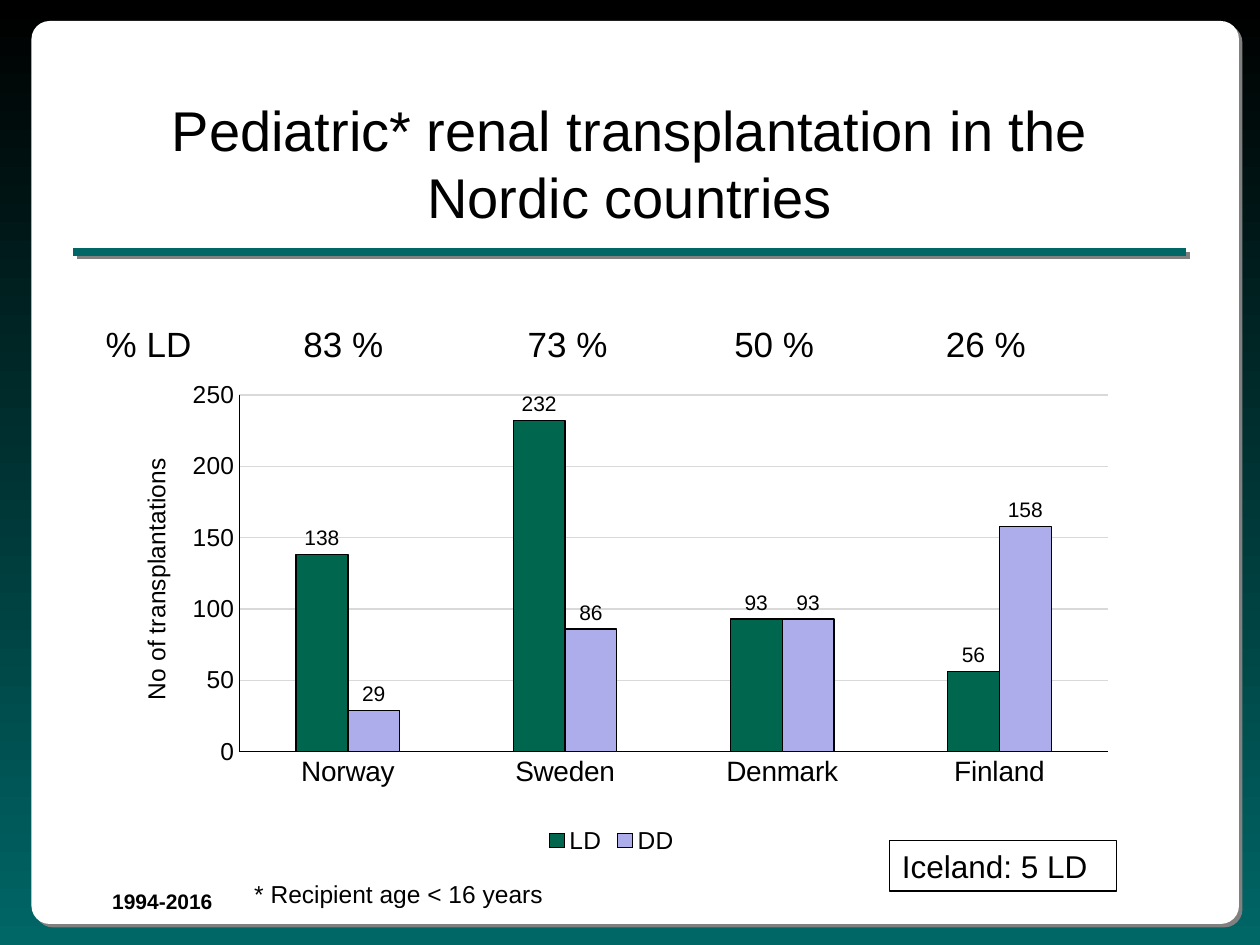
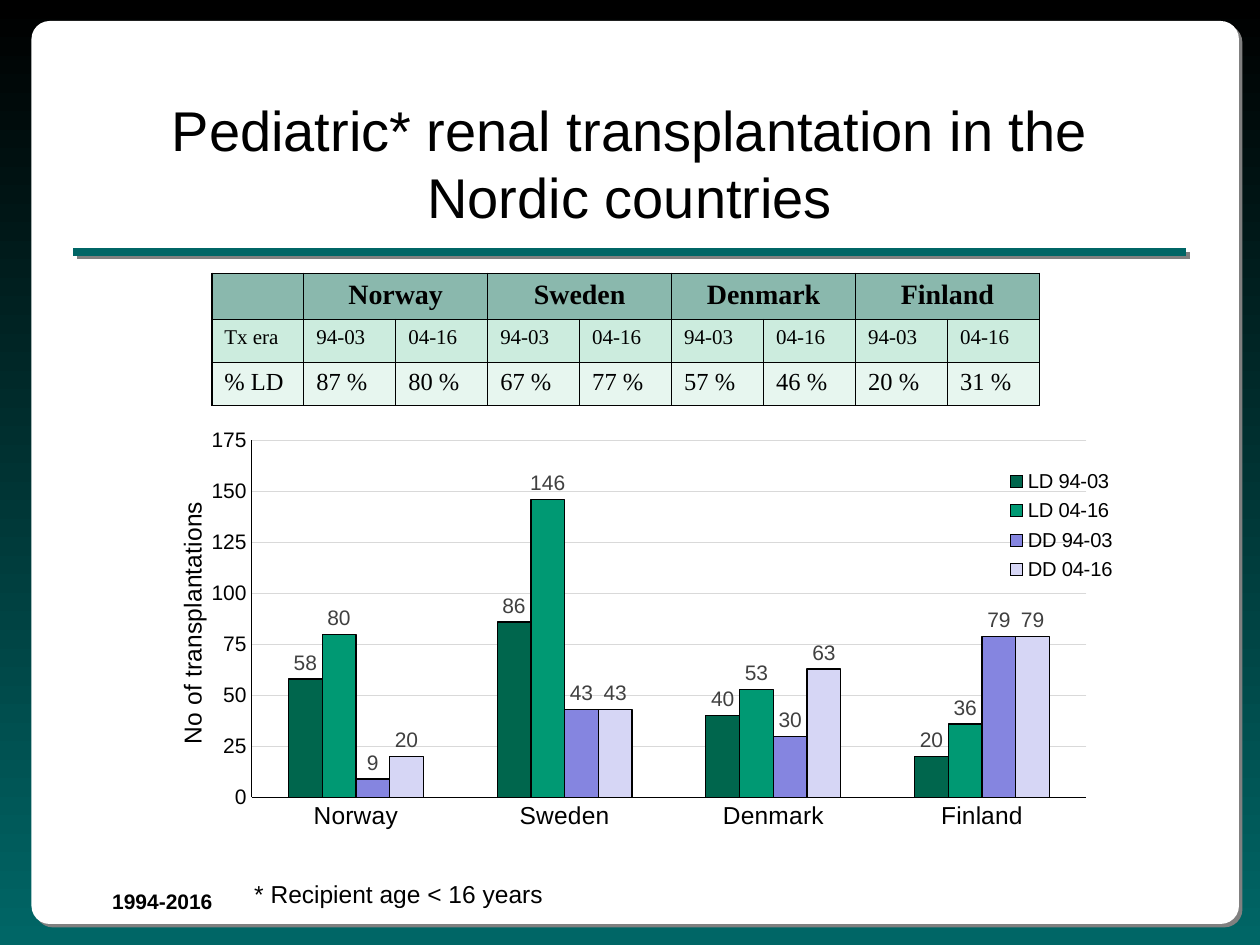
import pptx
import pptx.chart.data
import pptx.dml.color
import pptx.enum.chart
import pptx.enum.shapes
import pptx.enum.text
import pptx.oxml.ns
import pptx.util
from lxml import etree

Pt = pptx.util.Pt
qn = pptx.oxml.ns.qn


class Theme:
    sans, serif = "Arial", "Times New Roman"
    black, white, grey = "000000", "FFFFFF", "808080"
    teal, grid, soft_black = "006666", "D9D9D9", "404040"
    header, era_row, share_row = "00664D", "CCECDE", "E7F6EF"
    title, large, boxed, heading, medium, small = 32, 20, 18, 16, 14, 12
    legend = 11.5
    thin, table_line, rule = 0.75, 1, 4.5


# Content
TITLE = "Pediatric* renal transplantation in the Nordic countries"
PERIOD = "1994-2016"
FOOTNOTE = "* Recipient age < 16 years"
ICELAND = "Iceland: 5 LD"
AXIS_TITLE = "No of transplantations"
COUNTRIES = ["Norway", "Sweden", "Denmark", "Finland"]

# Text, left, width of the living donor shares above the chart
LD_SHARES = [
    ("% LD", 53.3, 63.4),
    ("83 %", 166.3, 60.5),
    ("73 %", 294.5, 60.5),
    ("50 %", 412.5, 63.4),
    ("26 %", 533.5, 60.5),
]

ERAS = ["94-03", "04-16"]
SHARES_BY_ERA = ["87 %", "80 %", "67 %", "77 %", "57 %", "46 %", "20 %", "31 %"]

TOTALS_CHART = {
    "bounds": (54, 211.7, 591, 279.4),
    "series": [
        ("LD", (138, 232, 93, 56), "00664D"),
        ("DD", (29, 86, 93, 158), "ADADEB"),
    ],
    "scale": {"minimum_scale": 0, "maximum_scale": 250, "major_unit": 50},
    "category_size": Theme.heading,
    "value_size": Theme.medium,
    "legend_size": Theme.medium,
    "label_color": Theme.black,
    "legend_position": pptx.enum.chart.XL_LEGEND_POSITION.BOTTOM,
    "plot_layout": (0.14, 0.05, 0.84, 0.73),
    "title_layout": (0.04, 0.17),
    "legend_layout": None,
}
ERAS_CHART = {
    "bounds": (75.6, 164.2, 568, 324),
    "series": [
        ("LD 94-03", (58, 86, 40, 20), "00664D"),
        ("LD 04-16", (80, 146, 53, 36), "009973"),
        ("DD 94-03", (9, 43, 30, 79), "8585E0"),
        ("DD 04-16", (20, 43, 63, 79), "D6D6F5"),
    ],
    "scale": {"minimum_scale": 0, "maximum_scale": 175, "major_unit": 25},
    "category_size": Theme.medium,
    "value_size": Theme.small,
    "legend_size": Theme.legend,
    "label_color": Theme.soft_black,
    "legend_position": pptx.enum.chart.XL_LEGEND_POSITION.RIGHT,
    "plot_layout": (0.12, 0.27, 0.84, 0.63),
    "title_layout": (0.04, 0.37),
    "legend_layout": (0.87, 0.31, 0.13, 0.22),
}


# Formatting helpers
def rgb(color):
    return pptx.dml.color.RGBColor.from_string(color)


def points(*lengths):
    return [Pt(length) for length in lengths]


def set_values(target, values):
    for name, value in values.items():
        setattr(target, name, value)


def set_font(font, size, color=Theme.black, name=Theme.sans, bold=False):
    set_values(font, {"name": name, "size": Pt(size), "bold": bold})
    font.color.rgb = rgb(color)


def set_line(line, color=Theme.black, width=Theme.thin):
    line.color.rgb = rgb(color)
    line.width = Pt(width)


def add_hard_shadow(shape):
    properties = shape.element.spPr
    for old in properties.findall(qn("a:effectLst")):
        properties.remove(old)
    effects = etree.SubElement(properties, qn("a:effectLst"))
    shadow = etree.SubElement(effects, qn("a:outerShdw"), blurRad="0",
                              dist=str(Pt(2.8)), dir="2700000",
                              algn="ctr", rotWithShape="0")
    etree.SubElement(shadow, qn("a:srgbClr"), val=Theme.grey)


def add_text(slide, text, bounds, size, wrap=False, bold=False):
    shape = slide.shapes.add_textbox(*points(*bounds))
    frame = shape.text_frame
    frame.text = text
    frame.word_wrap = wrap
    set_font(frame.paragraphs[0].font, size, bold=bold)
    return shape


# Shared layout: gradient, panel, period and rule
def build_layout(layout, slide):
    fill = layout.background.fill
    fill.gradient()
    fill.gradient_angle = 270
    for stop, color in zip(fill.gradient_stops, (Theme.black, Theme.teal)):
        stop.color.rgb = rgb(color)

    panel = slide.shapes.add_shape(pptx.enum.shapes.MSO_SHAPE.ROUNDED_RECTANGLE,
                                   *points(18, 12, 690, 516))
    panel.adjustments[0] = 0.02
    panel.fill.solid()
    panel.fill.fore_color.rgb = rgb(Theme.white)
    panel.line.fill.background()
    add_hard_shadow(panel)

    period = add_text(slide, PERIOD, (57, 504, 106, 21.6), Theme.small,
                      wrap=True, bold=True)

    rule = slide.shapes.add_connector(pptx.enum.shapes.MSO_CONNECTOR.STRAIGHT,
                                      *points(42, 144, 678, 144))
    set_line(rule.line, Theme.teal, Theme.rule)
    add_hard_shadow(rule)

    # Hand the finished parts to the layout under free identifiers
    for number, shape in enumerate((panel, period, rule), start=100):
        shape.element.xpath(".//p:cNvPr")[0].set("id", str(number))
        layout.shapes.element.append(shape.element)


def fill_common_parts(slide):
    title = slide.shapes.title
    set_values(title, dict(zip(("left", "top", "width", "height"),
                               points(54, 48, 612, 90))))
    frame = title.text_frame
    frame.text = TITLE
    set_values(frame, {
        "word_wrap": True,
        "auto_size": pptx.enum.text.MSO_AUTO_SIZE.NONE,
        "vertical_anchor": pptx.enum.text.MSO_ANCHOR.MIDDLE,
    })
    frame.paragraphs[0].alignment = pptx.enum.text.PP_ALIGN.CENTER
    set_font(frame.paragraphs[0].font, Theme.title)
    add_text(slide, FOOTNOTE, (138.2, 499, 180, 24.5), Theme.medium)


# Charts
def place_chart_part(part, index, fractions, inner=False):
    for old in part.findall(qn("c:layout")):
        part.remove(old)
    layout = etree.Element(qn("c:layout"))
    manual = etree.SubElement(layout, qn("c:manualLayout"))
    if inner:
        etree.SubElement(manual, qn("c:layoutTarget"), val="inner")
    for mode in ("xMode", "yMode"):
        etree.SubElement(manual, qn("c:" + mode), val="edge")
    for side, fraction in zip("xywh", fractions):
        etree.SubElement(manual, qn("c:" + side), val=str(fraction))
    part.insert(index, layout)


def add_column_chart(slide, settings):
    data = pptx.chart.data.CategoryChartData()
    data.categories = COUNTRIES
    for name, values, _ in settings["series"]:
        data.add_series(name, values)
    chart = slide.shapes.add_chart(
        pptx.enum.chart.XL_CHART_TYPE.COLUMN_CLUSTERED,
        *points(*settings["bounds"]), data).chart
    chart.has_title = False
    set_font(chart.font, 10)

    plot = chart.plots[0]
    set_values(plot, {"gap_width": 219, "overlap": 0,
                      "vary_by_categories": False, "has_data_labels": True})
    set_values(plot.data_labels, {
        "show_value": True,
        "position": pptx.enum.chart.XL_LABEL_POSITION.OUTSIDE_END,
    })
    set_font(plot.data_labels.font, Theme.small, settings["label_color"])
    for series, (_, _, color) in zip(plot.series, settings["series"]):
        series.format.fill.solid()
        series.format.fill.fore_color.rgb = rgb(color)
        set_line(series.format.line)

    no_tick = pptx.enum.chart.XL_TICK_MARK.NONE
    for axis, size in ((chart.category_axis, settings["category_size"]),
                       (chart.value_axis, settings["value_size"])):
        set_values(axis, {"major_tick_mark": no_tick, "minor_tick_mark": no_tick})
        set_font(axis.tick_labels.font, size)
        set_line(axis.format.line)
    value_axis = chart.value_axis
    set_values(value_axis, settings["scale"])
    set_line(value_axis.major_gridlines.format.line, Theme.grid)
    title_frame = value_axis.axis_title.text_frame
    title_frame.text = AXIS_TITLE
    set_font(title_frame.paragraphs[0].font, Theme.medium)

    chart.has_legend = True
    set_values(chart.legend, {"position": settings["legend_position"],
                              "include_in_layout": False})
    set_font(chart.legend.font, settings["legend_size"])

    plot_area = chart.element.xpath("c:chart/c:plotArea")[0]
    place_chart_part(plot_area, 0, settings["plot_layout"], inner=True)
    place_chart_part(plot_area.xpath("c:valAx/c:title")[0], 1,
                     settings["title_layout"])
    if settings["legend_layout"]:
        place_chart_part(chart.element.xpath("c:chart/c:legend")[0], 1,
                         settings["legend_layout"])


# Table of living donor shares by era
def format_cell(cell, size, fill, bold=False, alignment=None, opacity=None):
    properties = cell._tc.get_or_add_tcPr()
    for side in ("lnL", "lnR", "lnT", "lnB"):
        border = etree.SubElement(properties, qn("a:" + side),
                                  w=str(Pt(Theme.table_line)))
        solid = etree.SubElement(border, qn("a:solidFill"))
        etree.SubElement(solid, qn("a:srgbClr"), val=Theme.black)
    cell.fill.solid()
    cell.fill.fore_color.rgb = rgb(fill)
    if opacity:
        color = properties.find(qn("a:solidFill")).find(qn("a:srgbClr"))
        etree.SubElement(color, qn("a:alpha"), val=str(opacity * 1000))
    paragraph = cell.text_frame.paragraphs[0]
    paragraph.alignment = alignment
    set_font(paragraph.font, size, name=Theme.serif, bold=bold)


def add_share_table(slide):
    header = [""]
    for country in COUNTRIES:
        header += [country] + [""] * (len(ERAS) - 1)
    rows = [
        (header, {"size": Theme.heading, "fill": Theme.header, "bold": True,
                  "alignment": pptx.enum.text.PP_ALIGN.CENTER, "opacity": 46}),
        (["Tx era"] + ERAS * len(COUNTRIES),
         {"size": Theme.small, "fill": Theme.era_row}),
        (["% LD"] + SHARES_BY_ERA,
         {"size": Theme.medium, "fill": Theme.share_row}),
    ]
    table = slide.shapes.add_table(len(rows), len(header),
                                   *points(121, 156.2, 473, 73.8)).table
    for row_index, (texts, cell_format) in enumerate(rows):
        for column_index, text in enumerate(texts):
            cell = table.cell(row_index, column_index)
            cell.text = text
            format_cell(cell, **cell_format)
    for first in range(1, len(header), len(ERAS)):
        table.cell(0, first).merge(table.cell(0, first + len(ERAS) - 1))


def main():
    presentation = pptx.Presentation()
    presentation.slide_width, presentation.slide_height = points(720, 540)
    layout = presentation.slide_layouts[5]
    totals, eras = [presentation.slides.add_slide(layout) for _ in range(2)]
    build_layout(layout, totals)

    # Totals by country
    fill_common_parts(totals)
    add_column_chart(totals, TOTALS_CHART)
    for text, left, width in LD_SHARES:
        add_text(totals, text, (left, 180.7, width, 31.5), Theme.large)
    iceland = add_text(totals, ICELAND, (508.3, 480.2, 129.6, 29),
                       Theme.boxed, wrap=True)
    set_line(iceland.line)

    # Totals by country and era
    fill_common_parts(eras)
    add_column_chart(eras, ERAS_CHART)
    add_share_table(eras)

    presentation.save("out.pptx")


if __name__ == "__main__":
    main()
